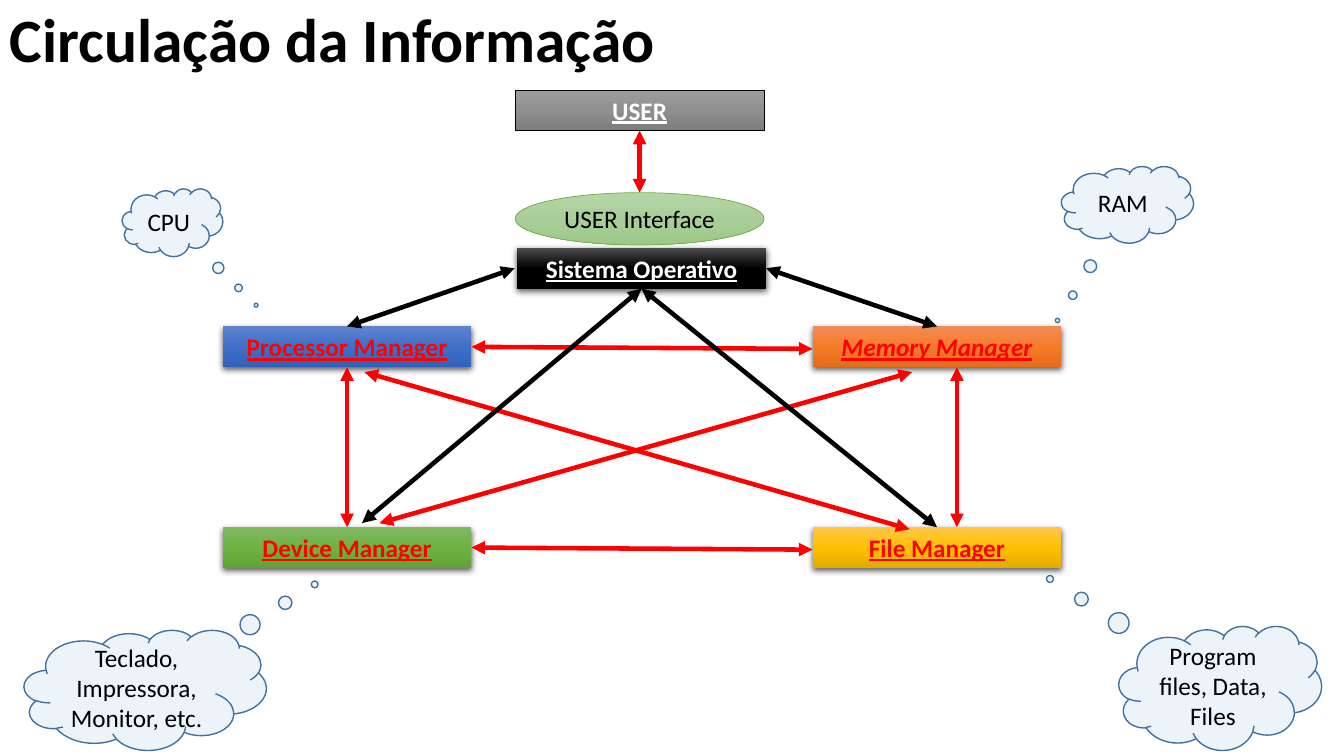
from copy import deepcopy
from lxml.etree import SubElement as Sub
from pptx import Presentation
from pptx.dml.color import RGBColor as RGB
from pptx.enum.shapes import MSO_CONNECTOR as CON, MSO_SHAPE as SHAPE
from pptx.enum.text import MSO_ANCHOR as ANCHOR, PP_ALIGN as ALIGN
from pptx.oxml.ns import qn
from pptx.util import Pt

BLACK = RGB(0, 0, 0)
WHITE = RGB(255, 255, 255)
RED = RGB(255, 0, 0)
GREEN = RGB(0x70, 0xAD, 0x47)
SKY = RGB(0x5B, 0x9B, 0xD5)
NAVY = RGB(0x43, 0x71, 0x9E)
FONT = "Calibri"

TITLE = "Circulação da Informação"
WIDE, HIGH = 177.8, 29.1
LEFT, MID, RIGHT = 159, 368, 580.4
UPPER, LOWER = 233.2, 376.6

USER, FACE, CORE = "USER", "USER Interface", "Sistema Operativo"
PROC, MEM = "Processor Manager", "Memory Manager"
DEV, FILE = "Device Manager", "File Manager"

# name: left, top, height, gradient, text colour, outline
BOXES = {
    MEM: (RIGHT, UPPER, HIGH, "F18C57 F67B28 E56C19", RED, None),
    FILE: (RIGHT, LOWER, HIGH, "FFC64B FFC000 E3AB00", RED, None),
    PROC: (LEFT, UPPER, HIGH, "6183CB 3E70CA 3062BB", RED, None),
    DEV: (LEFT, LOWER, HIGH, "81B861 6FB242 62A336", RED, None),
    USER: (MID, 64.2, HIGH, "9D9D9D 909090 7C7C7C", WHITE, BLACK),
    CORE: (369.4, 177.1, HIGH, "4B4B4B 000000 000000", WHITE, None),
    FACE: (MID, 137.6, 37.4, "B5D5A7 AACE9A 9CC987", BLACK, GREEN),
}

CLOUDS = [
    ("CPU", (87.2, 134.8, 72, 48.4), (0.83, 1.22)),
    ("RAM", (758.2, 118.8, 94.4, 54.8), (-0.53, 1.51)),
    ("Teclado, Impressora, Monitor, etc.", (17.2, 450, 173, 85.8), (0.7, -0.88)),
    ("Program files, Data, Files", (799.2, 447.2, 144.8, 88.6), (-0.84, -0.88)),
]

LINKS = [
    (PROC, (1, 0.5), MEM, (0, 0.55), RED),
    (DEV, (1, 0.5), FILE, (0, 0.55), RED),
    (DEV, (0.63, -0.1), MEM, (0.4, 1.12), RED),
    (PROC, (0.5, 1), DEV, (0.5, 0), RED),
    (MEM, (0.58, 1), FILE, (0.58, 0), RED),
    (PROC, (0.57, 1.12), FILE, (0.39, 0.05), RED),
    (USER, (0.5, 1), FACE, (0.5, 0), RED),
    (DEV, (0.56, -0.1), CORE, (0.5, 1), BLACK),
    (FILE, (0.5, 0), CORE, (0.5, 1), BLACK),
    (PROC, (0.5, 0), CORE, (-0.01, 0.5), BLACK),
    (CORE, (1, 0.5), MEM, (0.5, 0), BLACK),
]


def write(shape, text, size, color, bold, align, anchor):
    frame = shape.text_frame
    frame.word_wrap = True
    frame.vertical_anchor = anchor
    par = frame.paragraphs[0]
    par.text = text
    par.alignment = align
    font = par.font
    font.name, font.size, font.bold = FONT, Pt(size), bold
    font.color.rgb = color
    return par


def draw(kind, area):
    shape = slide.shapes.add_shape(kind, *map(Pt, area))
    shape.shadow.inherit = False
    return shape


def edge(shape, color, width):
    if color is None:
        shape.line.fill.background()
    else:
        shape.line.color.rgb = color
        shape.line.width = Pt(width)


def shade(shape, colors):
    fill = shape.fill
    fill.gradient()
    fill.gradient_angle = 270
    stops = shape._element.spPr.find(".//" + qn("a:gsLst"))
    stops.append(deepcopy(stops[0]))
    for i, (stop, color) in enumerate(zip(fill.gradient_stops, colors.split())):
        stop.position = i / 2
        stop.color.rgb = RGB.from_string(color)


def lift(shape):
    glow = shape._element.spPr.find(qn("a:effectLst"))
    cast = Sub(glow, qn("a:outerShdw"), blurRad=str(Pt(4.5)), dist=str(Pt(1.5)),
               dir="5400000", algn="ctr", rotWithShape="0")
    tint = Sub(cast, qn("a:srgbClr"), val="000000")
    Sub(tint, qn("a:alpha"), val="63000")


def box(name):
    left, top, high, colors, ink, rim = BOXES[name]
    oval = name == FACE
    shape = draw(SHAPE.OVAL if oval else SHAPE.RECTANGLE, (left, top, WIDE, high))
    shade(shape, colors)
    edge(shape, rim, 0.5)
    if rim is None:
        lift(shape)
    par = write(shape, name, 18, ink, not oval, ALIGN.CENTER,
                ANCHOR.MIDDLE if oval else ANCHOR.TOP)
    par.font.underline = not oval
    par.font.italic = name == MEM


def cloud(text, area, tail):
    shape = draw(SHAPE.CLOUD_CALLOUT, area)
    shape.adjustments[0], shape.adjustments[1] = tail
    shape.fill.solid()
    shape.fill.fore_color.rgb = SKY
    tint = shape._element.spPr.find(qn("a:solidFill"))[0]
    Sub(tint, qn("a:alpha"), val="11000")
    edge(shape, NAVY, 1)
    write(shape, text, 18, BLACK, False, ALIGN.CENTER, ANCHOR.MIDDLE)


def spot(name, part):
    left, top, high = BOXES[name][:3]
    return Pt(left + part[0] * WIDE), Pt(top + part[1] * high)


def link(start, out, end, into, color):
    line = slide.shapes.add_connector(CON.STRAIGHT, *spot(start, out), *spot(end, into))
    edge(line, color, 3.25)
    rule = line.line._get_or_add_ln()
    for tip in ("a:headEnd", "a:tailEnd"):
        Sub(rule, qn(tip), type="triangle")
    Sub(line._element.spPr, qn("a:effectLst"))


deck = Presentation()
deck.slide_width, deck.slide_height = Pt(960), Pt(540)
slide = deck.slides.add_slide(deck.slide_layouts[6])

head = slide.shapes.add_textbox(0, 0, Pt(633.6), Pt(60.5))
write(head, TITLE, 44, BLACK, True, ALIGN.LEFT, ANCHOR.MIDDLE).line_spacing = 0.9
for name in BOXES:
    box(name)
for item in CLOUDS:
    cloud(*item)
for item in LINKS:
    link(*item)

deck.save("out.pptx")
